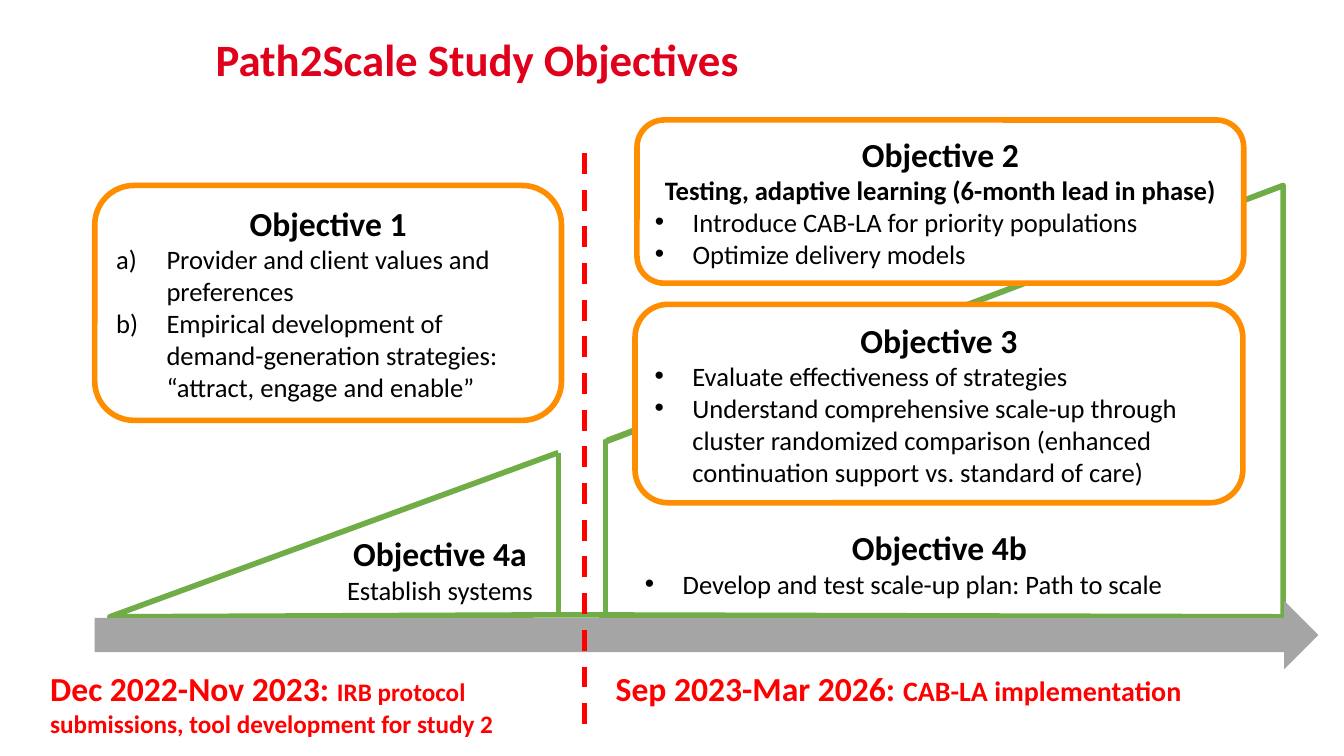
from dataclasses import dataclass

from lxml.etree import SubElement
from pptx import Presentation
from pptx.dml.color import RGBColor
from pptx.enum.dml import MSO_LINE
from pptx.enum.shapes import MSO_CONNECTOR, MSO_SHAPE
from pptx.enum.text import MSO_ANCHOR, PP_ALIGN
from pptx.oxml.ns import qn
from pptx.util import Pt

FONT = "Calibri"
BLACK, WHITE, RED, CRIMSON = "000000", "FFFFFF", "FF0000", "E0001B"
GREEN, ORANGE, GRAY = "70AD47", "FF8D00", "A5A5A5"
HEADING_SIZE, BODY_SIZE = 24, 19
BULLET_INDENT, LETTER_INDENT = 27, 36


@dataclass
class Box:
    left: float
    top: float
    width: float
    height: float

    def lengths(self):
        return Pt(self.left), Pt(self.top), Pt(self.width), Pt(self.height)


@dataclass
class Objective:
    box: Box
    heading: str
    framed: bool = False
    subheading: str = ""
    subheading_bold: bool = False
    items: tuple[str, ...] = ()
    lettered: bool = False


@dataclass
class Period:
    box: Box
    dates: str
    activity: str
    activity_size: float


@dataclass
class Line:
    start: tuple[float, float]
    end: tuple[float, float]
    color: str = GREEN
    dashed: bool = False


SCALE_UP_OUTLINE = [(398.9, 323.3), (78.5, 440.6), (398.9, 439.2),
                    (916.6, 440.6), (916.6, 132.5), (431.3, 316.1)]
TITLE_BOX = Box(146.9, 19.4, 412.6, 67.7)
TIMELINE_BOX = Box(67.7, 429.1, 874.1, 49)

LINES = [
    Line((433.4, 314.6), (916.6, 132.5)),
    Line((398.9, 323.3), (398.9, 440.6)),
    Line((432.7, 314.6), (432.7, 440.6)),
    Line((417.6, 109.4), (417.6, 519.8), RED, dashed=True),
]

OBJECTIVES = [
    Objective(Box(67.7, 132.5, 333.4, 167.8), "Objective 1", framed=True, lettered=True,
              items=("Provider and client values and preferences",
                     "Empirical development of demand-generation strategies: "
                     "“attract, engage and enable”")),
    Objective(Box(453.6, 373, 434.9, 59), "Objective 4b",
              items=("Develop and test scale-up plan: Path to scale",)),
    Objective(Box(209.5, 377.3, 209.5, 59), "Objective 4a",
              subheading="Establish systems"),
    Objective(Box(453.6, 217.4, 434.2, 141.8), "Objective 3", framed=True,
              items=("Evaluate effectiveness of strategies",
                     "Understand comprehensive scale-up through cluster randomized "
                     "comparison (enhanced continuation support vs. standard of care)")),
    Objective(Box(455, 85.7, 433.4, 116.6), "Objective 2", framed=True,
              subheading="Testing, adaptive learning (6-month lead in phase)",
              subheading_bold=True,
              items=("Introduce CAB-LA for priority populations",
                     "Optimize delivery models")),
]

PERIODS = [
    Period(Box(432.7, 473.8, 483.8, 36), "Sep 2023-Mar 2026: ",
           "CAB-LA implementation", 20),
    Period(Box(28.8, 473.8, 385.9, 58.3), "Dec 2022-Nov 2023: ",
           "IRB protocol submissions, tool development for study 2", 18),
]


def color_of(value: str) -> RGBColor:
    return RGBColor.from_string(value)


def set_font(font, size: float, color: str = BLACK, bold: bool = True) -> None:
    font.name = FONT
    font.size = Pt(size)
    font.bold = bold
    font.color.rgb = color_of(color)


def paint(shape, fill: str, line: str | None = None) -> None:
    shape.shadow.inherit = False
    shape.fill.solid()
    shape.fill.fore_color.rgb = color_of(fill)
    if line:
        shape.line.color.rgb = color_of(line)
        shape.line.width = Pt(4)
    else:
        shape.line.fill.background()


def add_text_box(slide, box: Box):
    shape = slide.shapes.add_textbox(*box.lengths())
    shape.text_frame.word_wrap = True
    return shape


def add_list_mark(paragraph, lettered: bool) -> None:
    indent = LETTER_INDENT if lettered else BULLET_INDENT
    properties = paragraph._p.get_or_add_pPr()
    properties.set("marL", str(Pt(indent)))
    properties.set("indent", str(-Pt(indent)))
    if lettered:
        SubElement(properties, qn("a:buFont"), typeface="+mj-lt")
        SubElement(properties, qn("a:buAutoNum"), type="alphaLcParenR")
    else:
        SubElement(properties, qn("a:buFont"), typeface="Arial")
        SubElement(properties, qn("a:buChar"), char="•")


def add_objective(slide, objective: Objective) -> None:
    if objective.framed:
        shape = slide.shapes.add_shape(MSO_SHAPE.ROUNDED_RECTANGLE, *objective.box.lengths())
        shape.adjustments[0] = 0.167
        paint(shape, WHITE, ORANGE)
        shape.text_frame.word_wrap = True
        shape.text_frame.vertical_anchor = MSO_ANCHOR.MIDDLE
    else:
        shape = add_text_box(slide, objective.box)
    frame = shape.text_frame
    heading = frame.paragraphs[0]
    heading.text = objective.heading
    heading.alignment = PP_ALIGN.CENTER
    set_font(heading.font, HEADING_SIZE)
    if objective.subheading:
        subheading = frame.add_paragraph()
        subheading.text = objective.subheading
        subheading.alignment = PP_ALIGN.CENTER
        set_font(subheading.font, BODY_SIZE, bold=objective.subheading_bold)
    for item in objective.items:
        paragraph = frame.add_paragraph()
        paragraph.text = item
        paragraph.alignment = PP_ALIGN.LEFT
        add_list_mark(paragraph, objective.lettered)
        set_font(paragraph.font, BODY_SIZE, bold=False)


def add_period(slide, period: Period) -> None:
    paragraph = add_text_box(slide, period.box).text_frame.paragraphs[0]
    for text, size in ((period.dates, HEADING_SIZE), (period.activity, period.activity_size)):
        run = paragraph.add_run()
        run.text = text
        set_font(run.font, size, RED)


def add_line(slide, line: Line) -> None:
    ends = [Pt(value) for value in line.start + line.end]
    connector = slide.shapes.add_connector(MSO_CONNECTOR.STRAIGHT, *ends)
    connector.line.color.rgb = color_of(line.color)
    connector.line.width = Pt(3.75)
    if line.dashed:
        connector.line.dash_style = MSO_LINE.DASH
    SubElement(connector._element.spPr, qn("a:effectLst"))


def main() -> None:
    presentation = Presentation()
    presentation.slide_width, presentation.slide_height = Pt(960), Pt(540)
    slide = presentation.slides.add_slide(presentation.slide_layouts[6])

    # Scale-up wedge and timeline arrow
    corners = [(Pt(x), Pt(y)) for x, y in SCALE_UP_OUTLINE]
    builder = slide.shapes.build_freeform(*corners[0])
    builder.add_line_segments(corners[1:], close=False)
    paint(builder.convert_to_shape(), WHITE, GREEN)
    paint(slide.shapes.add_shape(MSO_SHAPE.RIGHT_ARROW, *TIMELINE_BOX.lengths()), GRAY)

    # Wedge edges and phase divider
    for line in LINES:
        add_line(slide, line)

    # Title
    title = add_text_box(slide, TITLE_BOX).text_frame.paragraphs[0]
    title.text = "Path2Scale Study Objectives"
    set_font(title.font, 32, CRIMSON)

    # Objectives and periods
    for objective in OBJECTIVES:
        add_objective(slide, objective)
    for period in PERIODS:
        add_period(slide, period)

    presentation.save("out.pptx")


if __name__ == "__main__":
    main()
